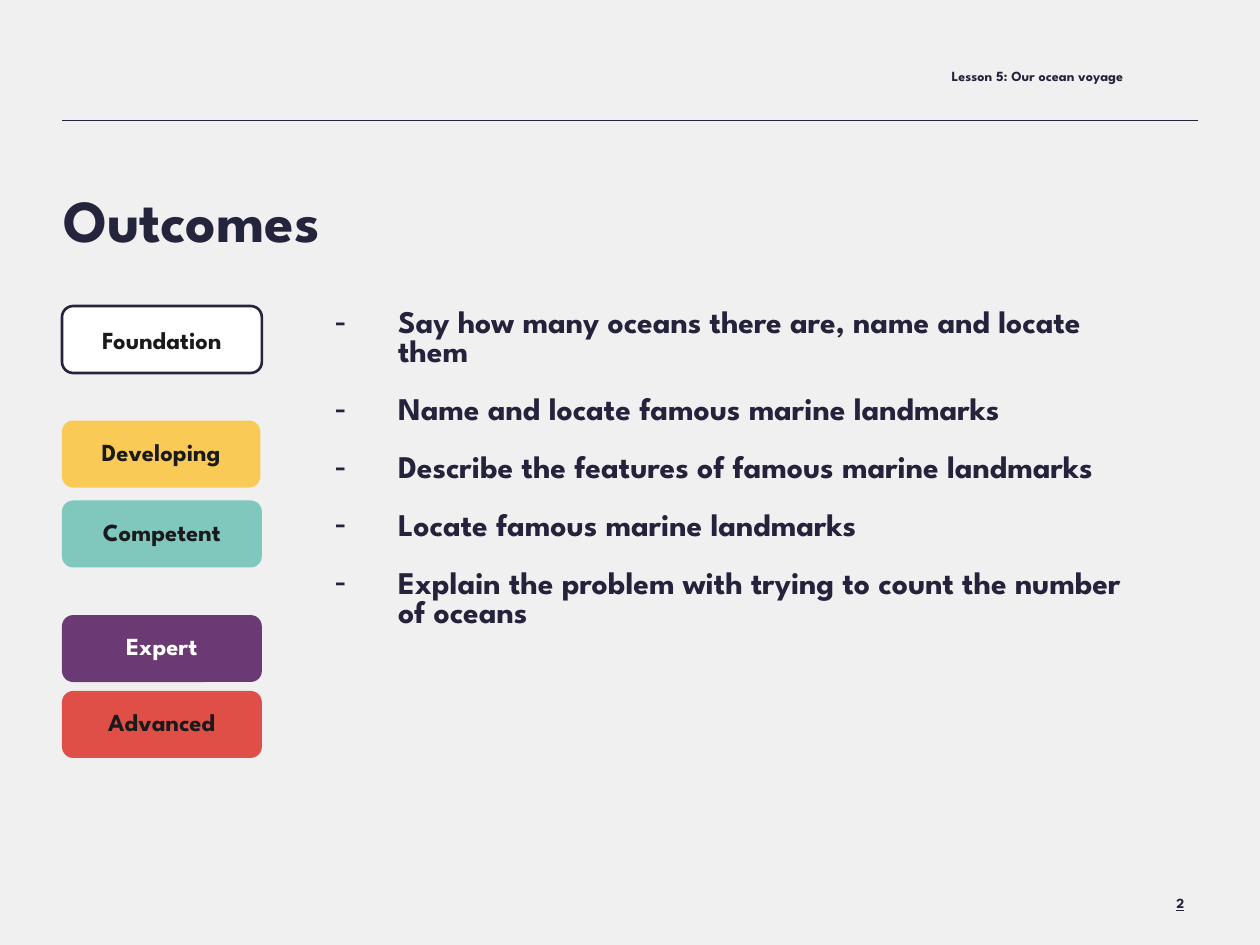
import pptx
import pptx.util
import pptx.dml.color
import pptx.enum.shapes
import pptx.enum.text
import pptx.oxml.ns
from lxml import etree
from pptx.util import Cm

THEME = {
    "font": "League Spartan",
    "background": "F0F0F0", "ink": "25243D", "text": "25233C", "rule": "25233F",
    "dark": "1A1A1A", "white": "FFFFFF",
    "yellow": "FACA56", "teal": "80C7BD", "purple": "6B3973", "red": "E04F47",
    "title": 34, "outcome": 18, "level": 14, "small": 8,
}
LEFT = Cm(1.25)
ALIGN = pptx.enum.text.PP_ALIGN
MIDDLE = pptx.enum.text.MSO_ANCHOR.MIDDLE


def rgb(name):
    return pptx.dml.color.RGBColor.from_string(THEME[name])


def write(p, text, size, color="ink", align=ALIGN.LEFT, spacing=None):
    p.alignment = align
    p.line_spacing = spacing
    r = p.add_run()
    r.text = text
    r.font.name = THEME["font"]
    r.font.size = pptx.util.Pt(THEME[size])
    r.font.bold = True
    r.font.color.rgb = rgb(color)
    return r


prs = pptx.Presentation()
prs.slide_width, prs.slide_height = Cm(25.4), Cm(19.05)
s = prs.slides.add_slide(prs.slide_layouts[5])
s.background.fill.solid()
s.background.fill.fore_color.rgb = rgb("background")

rule = s.shapes.add_connector(
    pptx.enum.shapes.MSO_CONNECTOR.STRAIGHT, LEFT, Cm(2.43), Cm(24.15), Cm(2.43))
rule.line.color.rgb = rgb("rule")
rule.line.width = pptx.util.Pt(1)
etree.SubElement(rule._element.spPr, pptx.oxml.ns.qn("a:effectLst"))

title = s.shapes.title
title.left, title.top, title.width, title.height = Cm(1.14), Cm(3.78), Cm(14.45), Cm(1.45)
tf = title.text_frame
tf.auto_size = pptx.enum.text.MSO_AUTO_SIZE.NONE
tf.vertical_anchor = MIDDLE
tf.margin_left = tf.margin_right = tf.margin_top = tf.margin_bottom = Cm(0.13)
write(tf.paragraphs[0], "Outcomes", "title", spacing=0.9)

header = s.shapes.add_textbox(Cm(11.62), Cm(1.24), Cm(11.28), Cm(0.61))
header.text_frame.word_wrap = True
write(header.text_frame.paragraphs[0], "Lesson 5: Our ocean voyage", "small", "text", ALIGN.RIGHT)

number = s.shapes.add_textbox(Cm(23.44), Cm(17.96), Cm(0.71), Cm(0.48))
tf = number.text_frame
tf.word_wrap = True
tf.margin_left = tf.margin_right = tf.margin_top = tf.margin_bottom = Cm(0.08)
write(tf.paragraphs[0], "2", "small", align=ALIGN.CENTER).font.underline = True

levels = [
    ("Foundation", 6.17, 4.03, "white", "dark"),
    ("Developing", 8.48, 4, "yellow", "dark"),
    ("Competent", 10.09, 4.03, "teal", "dark"),
    ("Expert", 12.4, 4.03, "purple", "white"),
    ("Advanced", 13.93, 4.03, "red", "dark"),
]
for name, top, width, fill, color in levels:
    sp = s.shapes.add_shape(
        pptx.enum.shapes.MSO_SHAPE.ROUNDED_RECTANGLE, LEFT, Cm(top), Cm(width), Cm(1.35))
    sp.shadow.inherit = False
    sp.fill.solid()
    sp.fill.fore_color.rgb = rgb(fill)
    if fill == "white":
        sp.line.color.rgb = rgb("ink")
        sp.line.width = pptx.util.Pt(1.5)
    else:
        sp.line.fill.background()
    tf = sp.text_frame
    tf.vertical_anchor = MIDDLE
    tf.margin_top = Cm(0.13 if fill == "white" else 0)
    tf.margin_bottom = 0
    write(tf.paragraphs[0], name, "level", color, ALIGN.CENTER, 0.8)

outcomes = [
    "Say how many oceans there are, name and locate them",
    "Name and locate famous marine landmarks",
    "Describe the features of famous marine landmarks",
    "Locate famous marine landmarks",
    "Explain the problem with trying to count the number of oceans",
]
heights = [8.64, 2.46, 3.81, 1.45, 2.03]
table = s.shapes.add_table(
    len(heights), 1, Cm(6.5), Cm(6.15), Cm(16.94), Cm(sum(heights))).table
table.first_row = table.horz_banding = False
for row, height in zip(table.rows, heights):
    row.height = Cm(height)
    cell = row.cells[0]
    tcPr = cell._tc.get_or_add_tcPr()
    for side in ("a:lnL", "a:lnR", "a:lnT", "a:lnB"):
        border = etree.SubElement(tcPr, pptx.oxml.ns.qn(side))
        etree.SubElement(border, pptx.oxml.ns.qn("a:noFill"))
    cell.fill.background()

tf = table.cell(0, 0).text_frame
for i, outcome in enumerate(outcomes):
    p = tf.add_paragraph() if i else tf.paragraphs[0]
    pPr = p._p.get_or_add_pPr()
    pPr.set("marL", str(Cm(1.27)))
    pPr.set("indent", str(-Cm(1.27)))
    etree.SubElement(pPr, pptx.oxml.ns.qn("a:buChar")).set("char", "-")
    if i:
        p.space_before = pptx.util.Pt(16.5)
    write(p, outcome, "outcome", "text")

prs.save("out.pptx")
